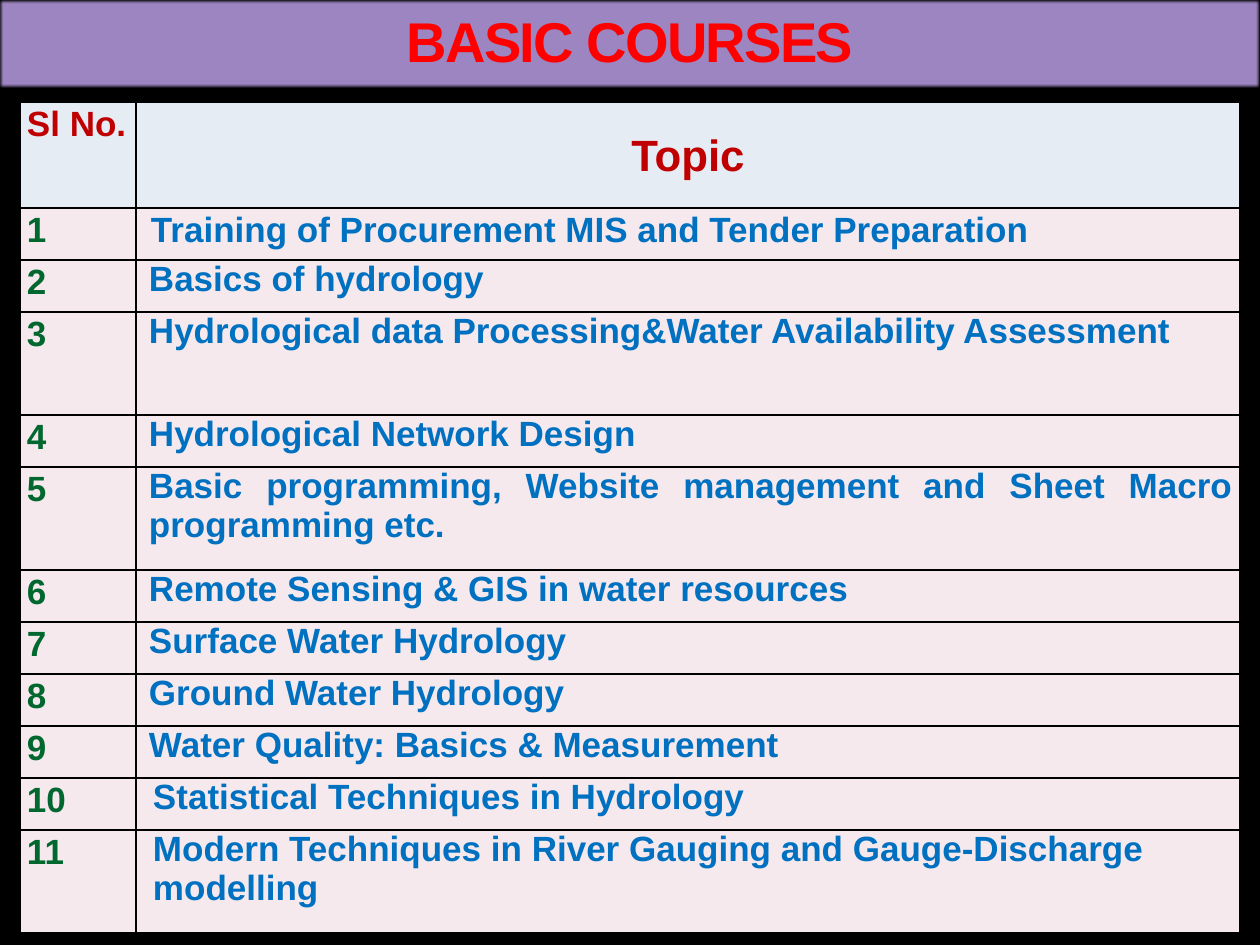
import pptx
import pptx.dml.color
import pptx.enum.shapes
import pptx.enum.text
import pptx.util
from lxml import etree

# Content: number, topic, indent in px, lines of room
HEADINGS = ("Sl No.", "Topic")
COURSES = [
    ("1", "Training of Procurement MIS and Tender Preparation", 8, 1),
    ("2", "Basics of hydrology", 6, 1),
    ("3", "Hydrological data Processing&Water Availability Assessment", 6, 2),
    ("4", "Hydrological Network Design", 6, 1),
    ("5", "Basic programming, Website management and Sheet Macro programming etc.", 6, 2),
    ("6", "Remote Sensing & GIS in water resources", 6, 1),
    ("7", "Surface Water Hydrology", 6, 1),
    ("8", "Ground Water Hydrology", 6, 1),
    ("9", "Water Quality: Basics & Measurement", 6, 1),
    ("10", "Statistical Techniques in Hydrology", 10, 1),
    ("11", "Modern Techniques in River Gauging and Gauge-Discharge modelling", 10, 2),
]
JUSTIFIED = ("1", "5")

# Layout in px
WIDTH, HEIGHT = 1260, 945
BANNER_HEIGHT = 88
TABLE_LEFT, TABLE_TOP = 20, 102
COLUMNS = (116, 1104)
HEADING_HEIGHT = 106
ROW_HEIGHTS = {1: 52, 2: 103}
CELL_INSET = 7

BLACK, RED, PURPLE = "000000", "FF0000", "9C85C0"
DARK_RED, GREEN, BLUE = "C00000", "00682F", "0070C0"
HEADING_FILL, ROW_FILL = "E6ECF3", "F6E9ED"
ALIGN = pptx.enum.text.PP_ALIGN
ANCHOR = pptx.enum.text.MSO_ANCHOR
A = "http://schemas.openxmlformats.org/drawingml/2006/main"


def px(length):
    return pptx.util.Emu(length * 914400 // 126)


def color(value):
    return pptx.dml.color.RGBColor.from_string(value)


def paint(target, value):
    target.fill.solid()
    target.fill.fore_color.rgb = color(value)


def write(frame, text, size=20, ink=BLACK, align=ALIGN.JUSTIFY, line=None,
          indent=0, tracking=None):
    paragraph = frame.paragraphs[0]
    paragraph.alignment = align
    if line:
        paragraph.line_spacing = line
    if indent:
        paragraph._p.get_or_add_pPr().set("marL", str(px(indent)))
    run = paragraph.add_run()
    run.text = text
    run.font.name = "Arial"
    run.font.size = pptx.util.Pt(size)
    run.font.bold = True
    run.font.color.rgb = color(ink)
    if tracking:
        run.font._element.set("spc", str(tracking * 100))


def fill_cell(cell, text, fill, anchor=ANCHOR.TOP, **style):
    cell.margin_left = cell.margin_right = px(CELL_INSET)
    cell.margin_top = cell.margin_bottom = 0
    cell.vertical_anchor = anchor
    write(cell.text_frame, text, **style)
    properties = cell._tc.get_or_add_tcPr()
    for side in ("lnL", "lnR", "lnT", "lnB"):
        properties.append(etree.fromstring(
            f'<a:{side} xmlns:a="{A}" w="12700"><a:solidFill>'
            f'<a:srgbClr val="{BLACK}"/></a:solidFill></a:{side}>'))
    paint(cell, fill)


deck = pptx.Presentation()
deck.slide_width, deck.slide_height = px(WIDTH), px(HEIGHT)
slide = deck.slides.add_slide(deck.slide_layouts[6])
paint(slide.background, BLACK)

# Course table
heights = [HEADING_HEIGHT] + [ROW_HEIGHTS[lines] for *_, lines in COURSES]
table = slide.shapes.add_table(
    len(heights), len(COLUMNS), px(TABLE_LEFT), px(TABLE_TOP),
    px(sum(COLUMNS)), px(sum(heights))).table
for column, width in zip(table.columns, COLUMNS):
    column.width = px(width)
for row, height in zip(table.rows, heights):
    row.height = px(height)

fill_cell(table.cell(0, 0), HEADINGS[0], HEADING_FILL, ink=DARK_RED, line=1.07)
fill_cell(table.cell(0, 1), HEADINGS[1], HEADING_FILL, anchor=ANCHOR.MIDDLE,
          size=25, ink=DARK_RED, align=ALIGN.CENTER, line=1.07)
for index, (number, topic, indent, _) in enumerate(COURSES, start=1):
    fill_cell(table.cell(index, 0), number, ROW_FILL, ink=GREEN, line=1.07)
    fill_cell(table.cell(index, 1), topic, ROW_FILL, ink=BLUE, indent=indent,
              align=ALIGN.JUSTIFY if number in JUSTIFIED else ALIGN.LEFT,
              line=1.07 if index == 1 else None)

# Title banner with soft edges
banner = slide.shapes.add_shape(
    pptx.enum.shapes.MSO_SHAPE.RECTANGLE, 0, 0, px(WIDTH), px(BANNER_HEIGHT))
paint(banner, PURPLE)
banner.line.fill.background()
banner.shadow.inherit = False
effects = banner._element.spPr.find(f"{{{A}}}effectLst")
etree.SubElement(effects, f"{{{A}}}softEdge", rad="12700")
banner.text_frame.word_wrap = True
banner.text_frame.vertical_anchor = ANCHOR.MIDDLE
write(banner.text_frame, "BASIC COURSES", size=32, ink=RED,
      align=ALIGN.CENTER, line=0.9, tracking=-1)

deck.save("out.pptx")
